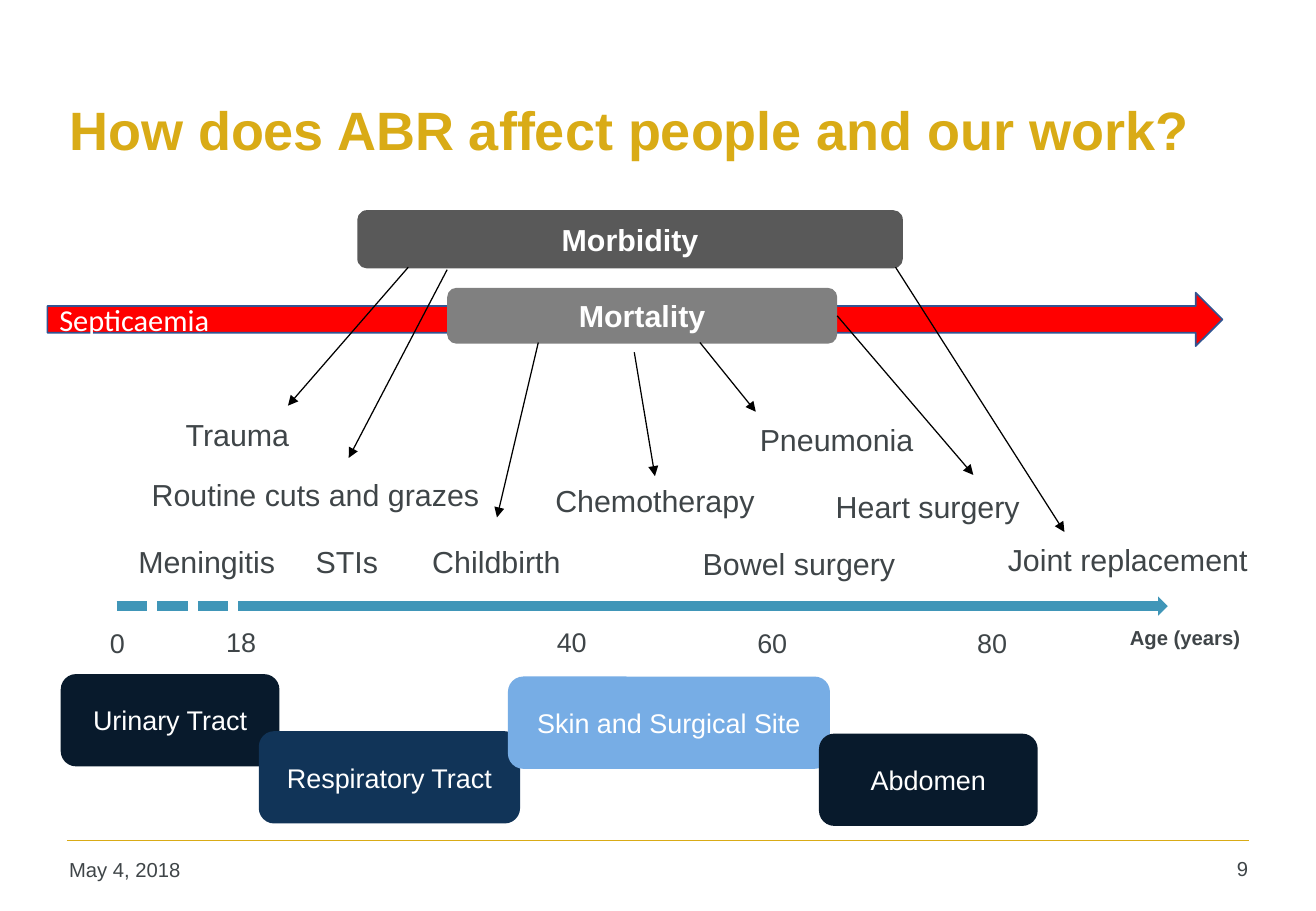
from typing import NamedTuple

from lxml import etree
from pptx import Presentation
from pptx.dml.color import RGBColor
from pptx.enum.dml import MSO_LINE
from pptx.enum.shapes import MSO_CONNECTOR, MSO_SHAPE
from pptx.enum.text import MSO_ANCHOR, PP_ALIGN
from pptx.oxml.ns import qn
from pptx.util import Inches, Pt

LEFT, CENTER, RIGHT = PP_ALIGN.LEFT, PP_ALIGN.CENTER, PP_ALIGN.RIGHT
TOP, MIDDLE = MSO_ANCHOR.TOP, MSO_ANCHOR.MIDDLE
ROUNDED, ARROW = MSO_SHAPE.ROUNDED_RECTANGLE, MSO_SHAPE.RIGHT_ARROW
STRAIGHT = MSO_CONNECTOR.STRAIGHT
DASHED = MSO_LINE.SQUARE_DOT
WIDTH, HEIGHT = Inches(10.83), Inches(7.5)
COLUMNS, ROWS = 1083, 750
COLORS = {
    "gold": "D9AB16", "text": "3F4548", "white": "FFFFFF", "black": "000000",
    "red": "FF0000", "outline": "325491", "axis": "4096B8",
    "morbidity": "595959", "mortality": "808080",
    "navy": "081A2C", "blue": "113458", "sky": "77ADE5",
}


class Box(NamedTuple):
    """A rectangle in grid columns and rows."""
    left: int
    top: int
    width: int
    height: int

    def inner(self, left, top, width, height):
        """Return a box offset from this box's corner."""
        return Box(self.left + left, self.top + top, width, height)

    def lengths(self):
        """Return left, top, width and height as slide lengths."""
        column, row = WIDTH / COLUMNS, HEIGHT / ROWS
        return (round(self.left * column), round(self.top * row),
                round(self.width * column), round(self.height * row))


def color(name):
    """Look up a named colour."""
    return RGBColor.from_string(COLORS[name])


def write(shape, text, size, ink="text", align=LEFT, anchor=TOP, bold=False, font="Arial"):
    """Write one styled run into a shape."""
    frame = shape.text_frame
    frame.word_wrap = True
    frame.vertical_anchor = anchor
    paragraph = frame.paragraphs[0]
    paragraph.alignment = align
    run = paragraph.add_run()
    run.text = text
    run.font.name = font
    run.font.size = Pt(size)
    run.font.bold = bold
    run.font.color.rgb = color(ink)


def add_label(slide, box, text, size, **style):
    """Add a text box."""
    write(slide.shapes.add_textbox(*box.lengths()), text, size, **style)


def add_block(slide, kind, box, fill, outline=None):
    """Add a filled shape and return it."""
    shape = slide.shapes.add_shape(kind, *box.lengths())
    shape.shadow.inherit = False
    shape.fill.solid()
    shape.fill.fore_color.rgb = color(fill)
    if outline:
        shape.line.color.rgb = color(outline)
        shape.line.width = Pt(1)
    else:
        shape.line.fill.background()
    return shape


def add_line(slide, box, ink, weight, arrow=False, dash=None):
    """Add a line from the box's corner across its signed width and height."""
    left, top, width, height = box.lengths()
    line = slide.shapes.add_connector(STRAIGHT, left, top, left + width, top + height)
    line.line.color.rgb = color(ink)
    line.line.width = Pt(weight)
    if dash:
        line.line.dash_style = dash
    if arrow:
        etree.SubElement(line.line._get_or_add_ln(), qn("a:tailEnd"), type="triangle")
    etree.SubElement(line._element.spPr, qn("a:effectLst"))


def draw_title(slide, box):
    """Draw the heading."""
    add_label(slide, box, "How does ABR affect people and our work?", 32,
              ink="gold", anchor=MIDDLE, bold=True)


def draw_impact(slide, box):
    """Draw the burden bars, their arrows and the affected conditions."""
    septicaemia = add_block(slide, ARROW, box.inner(0, 68, box.width - 43, 44), "red", "outline")
    write(septicaemia, "Septicaemia", 18, ink="white", anchor=MIDDLE, font="Calibri")
    bars = [("Morbidity", "morbidity", (255, 0, 449, 48)),
            ("Mortality", "mortality", (329, 64, 321, 46))]
    for text, fill, place in bars:
        bar = add_block(slide, ROUNDED, box.inner(*place), fill)
        write(bar, text, 18, ink="white", align=CENTER, anchor=MIDDLE, bold=True)
    conditions = [
        ("Trauma", 104, 165, 110, LEFT),
        ("Routine cuts and grazes", 76, 214, 330, LEFT),
        ("Meningitis", 65, 269, 140, LEFT),
        ("STIs", 211, 269, 96, LEFT),
        ("Childbirth", 294, 269, 151, CENTER),
        ("Chemotherapy", 407, 219, 186, CENTER),
        ("Bowel surgery", 518, 271, 201, CENTER),
        ("Pneumonia", 549, 169, 201, CENTER),
        ("Heart surgery", 624, 224, 201, CENTER),
        ("Joint replacement", 768, 268, 242, CENTER),
    ]
    for text, left, top, width, align in conditions:
        add_label(slide, box.inner(left, top, width, 40), text, 18, align=align)
    arrows = [
        (297, 47, -99, 114), (329, 49, -81, 155), (404, 109, -34, 144),
        (483, 117, 17, 102), (537, 109, 46, 57), (650, 87, 112, 131),
        (698, 47, 139, 218),
    ]
    for place in arrows:
        add_line(slide, box.inner(*place), "black", 0.75, arrow=True)


def draw_age_axis(slide, box):
    """Draw the age axis with its dashed childhood part."""
    add_block(slide, ARROW, box.inner(130, 0, 762, 16), "axis")
    add_line(slide, box.inner(27, 8, 103, 0), "axis", 6, dash=DASHED)
    ages = [("0", 0, 20), ("18", 102, 19), ("40", 374, 19), ("60", 539, 20), ("80", 720, 20)]
    for text, left, top in ages:
        add_label(slide, box.inner(left, top, 55, 37), text, 16, align=CENTER)
    add_label(slide, box.inner(box.width - 125, 19, 125, 30), "Age (years)", 12, bold=True)


def draw_infection_sites(slide, box):
    """Draw the staggered infection sites."""
    sites = [
        ("Urinary Tract", "navy", 0, 0, 180),
        ("Respiratory Tract", "blue", 163, 47, 215),
        ("Skin and Surgical Site", "sky", 368, 2, 265),
        ("Abdomen", "navy", 624, 49, 180),
    ]
    for text, fill, left, top, width in sites:
        site = add_block(slide, ROUNDED, box.inner(left, top, width, 76), fill)
        write(site, text, 16, ink="white", align=CENTER, anchor=MIDDLE)


def draw_footer(slide, box):
    """Draw the rule, date and page number."""
    add_line(slide, box.inner(8, 0, box.width - 17, 0), "gold", 1)
    add_label(slide, box.inner(0, 9, 239, 36), "May 4, 2018", 12)
    add_label(slide, box.inner(box.width - 77, 8, 77, 37), "9", 12, align=RIGHT)


def main():
    """Build and save the slide."""
    presentation = Presentation()
    presentation.slide_width, presentation.slide_height = WIDTH, HEIGHT
    slide = presentation.slides.add_slide(presentation.slide_layouts[6])
    draw_title(slide, Box(47, 44, 982, 125))
    draw_impact(slide, Box(39, 173, 1010, 311))
    draw_age_axis(slide, Box(69, 491, 976, 57))
    draw_infection_sites(slide, Box(50, 555, 804, 125))
    draw_footer(slide, Box(47, 692, 990, 45))
    presentation.save("out.pptx")


if __name__ == "__main__":
    main()
